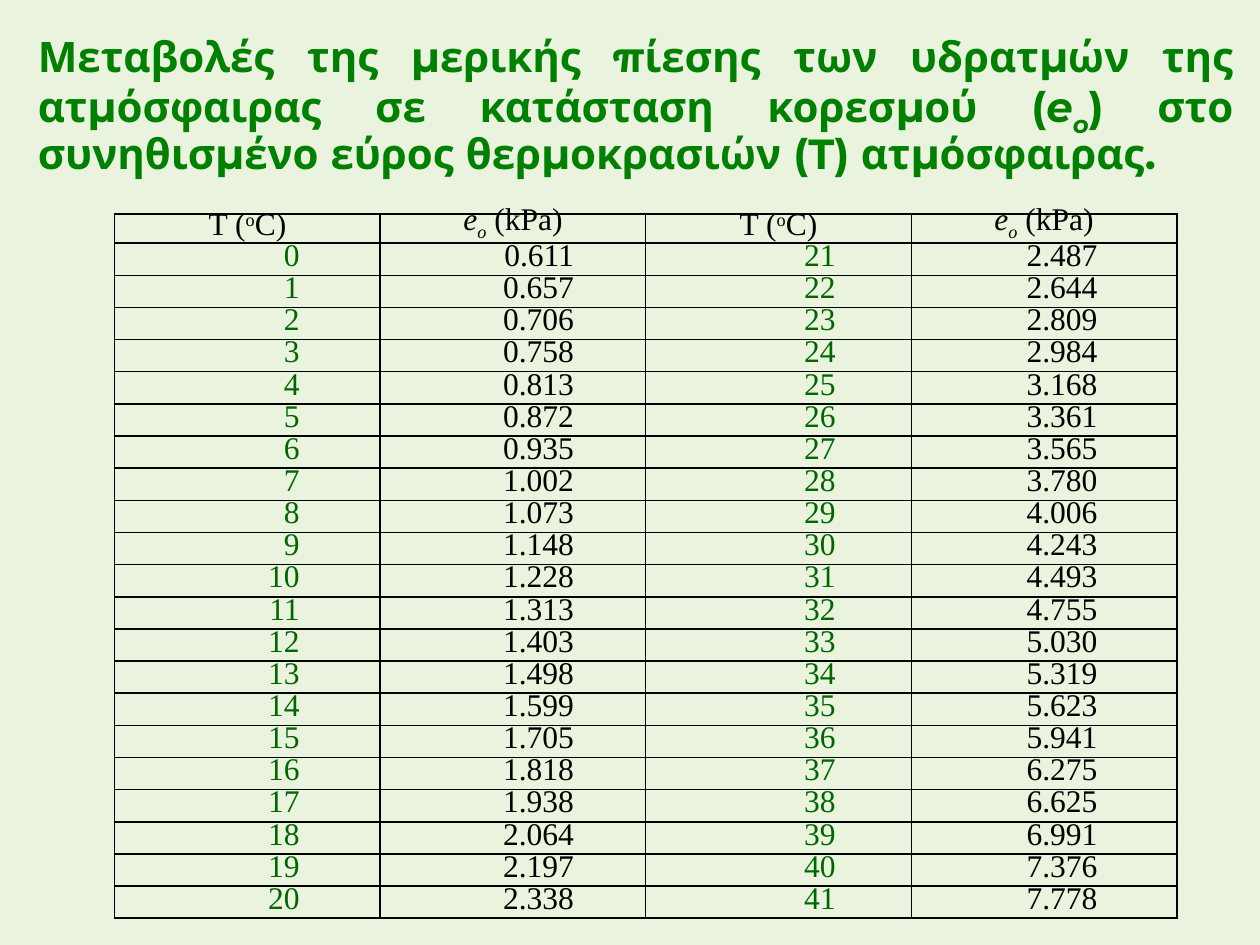
from dataclasses import dataclass

from lxml import etree
from pptx import Presentation
from pptx.dml.color import RGBColor
from pptx.enum.text import MSO_ANCHOR, MSO_AUTO_SIZE, PP_ALIGN
from pptx.oxml.ns import qn
from pptx.util import Inches, Pt

MIDDLE = MSO_ANCHOR.MIDDLE
NO_AUTOFIT = MSO_AUTO_SIZE.NONE
CENTER, RIGHT, JUSTIFY = PP_ALIGN.CENTER, PP_ALIGN.RIGHT, PP_ALIGN.JUSTIFY

BACKGROUND = RGBColor(0xEA, 0xF3, 0xDD)
TITLE_GREEN = RGBColor(0x00, 0x80, 0x00)
TEMPERATURE_GREEN = RGBColor(0x00, 0x66, 0x00)
BLACK = RGBColor(0x00, 0x00, 0x00)

TITLE_FONT = "Montserrat"
TABLE_FONT = "Times New Roman"

TABLE_LEFT, TABLE_TOP, TABLE_WIDTH, TABLE_HEIGHT = 0.91, 1.7, 8.43, 5.59
HEADER_HEIGHT = 0.23
CELL_MARGIN = 0.07
LINE_SPACING = Pt(16)

PRESSURES = (
    "0.611 0.657 0.706 0.758 0.813 0.872 0.935 1.002 1.073 1.148 1.228 "
    "1.313 1.403 1.498 1.599 1.705 1.818 1.938 2.064 2.197 2.338 "
    "2.487 2.644 2.809 2.984 3.168 3.361 3.565 3.780 4.006 4.243 4.493 "
    "4.755 5.030 5.319 5.623 5.941 6.275 6.625 6.991 7.376 7.778"
).split()
TEMPERATURES = [str(degrees) for degrees in range(len(PRESSURES))]
VALUE_ROWS = len(PRESSURES) // 2


@dataclass(frozen=True)
class Piece:
    text: str
    italic: bool = False
    baseline: int = 0


@dataclass(frozen=True)
class Column:
    header: tuple[Piece, ...]
    values: list[str]
    color: RGBColor
    right_margin: float


TITLE = (
    Piece("Μεταβολές της μερικής πίεσης των υδρατμών της ατμόσφαιρας "
          "σε κατάσταση κορεσμού ("),
    Piece("e", italic=True),
    Piece("o", italic=True, baseline=-25),
    Piece(") στο συνηθισμένο εύρος θερμοκρασιών (T) ατμόσφαιρας."),
)
TEMPERATURE_HEADER = (Piece("T ("), Piece("ο", baseline=30), Piece("C)"))
PRESSURE_HEADER = (
    Piece("e", italic=True),
    Piece("o", italic=True, baseline=-25),
    Piece(" (kPa)"),
)
COLUMNS = (
    Column(TEMPERATURE_HEADER, TEMPERATURES[:VALUE_ROWS], TEMPERATURE_GREEN, 0.64),
    Column(PRESSURE_HEADER, PRESSURES[:VALUE_ROWS], BLACK, 0.57),
    Column(TEMPERATURE_HEADER, TEMPERATURES[VALUE_ROWS:], TEMPERATURE_GREEN, 0.6),
    Column(PRESSURE_HEADER, PRESSURES[VALUE_ROWS:], BLACK, 0.63),
)


def write_text(text_frame, pieces: tuple[Piece, ...], *, font: str, size: float,
               color: RGBColor, align, line_spacing, bold: bool = False) -> None:
    paragraph = text_frame.paragraphs[0]
    paragraph.alignment = align
    paragraph.line_spacing = line_spacing
    for piece in pieces:
        run = paragraph.add_run()
        run.text = piece.text
        run.font.name = font
        run.font.size = Pt(size)
        run.font.bold = bold
        run.font.italic = piece.italic
        run.font.color.rgb = color
        if piece.baseline:
            run.font._element.set("baseline", str(piece.baseline * 1000))


def set_borders(cell, color: RGBColor, width: float) -> None:
    properties = cell._tc.get_or_add_tcPr()
    for position, side in enumerate(("a:lnL", "a:lnR", "a:lnT", "a:lnB")):
        line = etree.Element(qn(side), w=str(Pt(width)))
        fill = etree.SubElement(line, qn("a:solidFill"))
        etree.SubElement(fill, qn("a:srgbClr"), val=str(color))
        properties.insert(position, line)


def fill_cell(cell, pieces: tuple[Piece, ...], color: RGBColor, align,
              right_margin: float = CELL_MARGIN) -> None:
    cell.fill.background()
    cell.vertical_anchor = MIDDLE
    cell.margin_left = Inches(CELL_MARGIN)
    cell.margin_right = Inches(right_margin)
    cell.margin_top = cell.margin_bottom = 0
    set_borders(cell, BLACK, 1)
    write_text(cell.text_frame, pieces, font=TABLE_FONT, size=18, color=color,
               align=align, line_spacing=LINE_SPACING)


def add_title(slide) -> None:
    title = slide.shapes.title
    title.left, title.top = Inches(0.2), Inches(0.13)
    title.width, title.height = Inches(9.69), Inches(1.44)
    title.text_frame.auto_size = NO_AUTOFIT
    title.text_frame.vertical_anchor = MIDDLE
    write_text(title.text_frame, TITLE, font=TITLE_FONT, size=24, bold=True,
               color=TITLE_GREEN, align=JUSTIFY, line_spacing=0.9)


def add_pressure_table(slide) -> None:
    table = slide.shapes.add_table(
        VALUE_ROWS + 1, len(COLUMNS), Inches(TABLE_LEFT), Inches(TABLE_TOP),
        Inches(TABLE_WIDTH), Inches(TABLE_HEIGHT)).table
    table.first_row = table.horz_banding = False
    for row in table.rows:
        row.height = Inches((TABLE_HEIGHT - HEADER_HEIGHT) / VALUE_ROWS)
    table.rows[0].height = Inches(HEADER_HEIGHT)
    for column_index, column in enumerate(COLUMNS):
        fill_cell(table.cell(0, column_index), column.header, BLACK, CENTER)
        for row_index, value in enumerate(column.values, start=1):
            fill_cell(table.cell(row_index, column_index), (Piece(value),),
                      column.color, RIGHT, column.right_margin)


def main() -> None:
    presentation = Presentation()
    presentation.slide_width, presentation.slide_height = Inches(10), Inches(7.5)
    title_only = presentation.slide_layouts[5]
    slide = presentation.slides.add_slide(title_only)
    slide.background.fill.solid()
    slide.background.fill.fore_color.rgb = BACKGROUND
    add_title(slide)
    add_pressure_table(slide)
    presentation.save("out.pptx")


if __name__ == "__main__":
    main()
